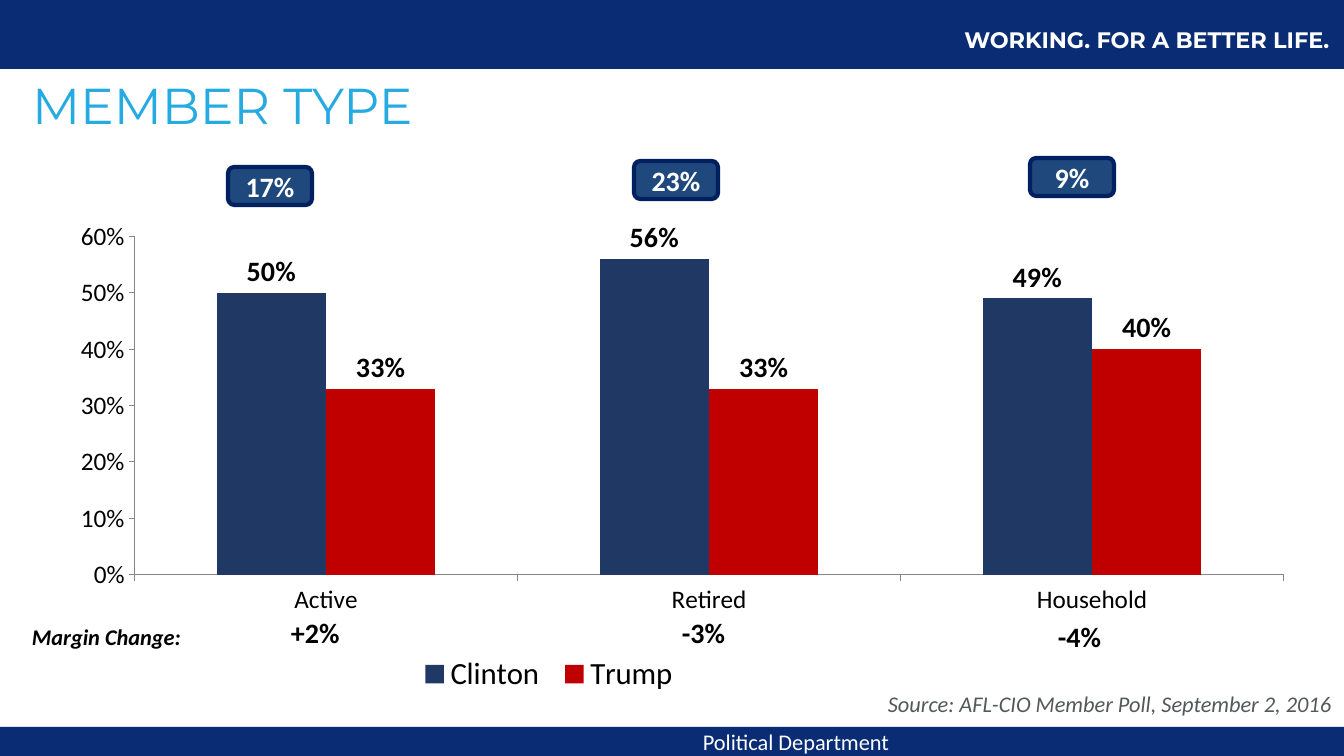
from lxml.etree import SubElement
from pptx import Presentation
from pptx.chart.data import CategoryChartData
from pptx.dml.color import RGBColor
from pptx.enum.chart import XL_CHART_TYPE, XL_LABEL_POSITION, XL_LEGEND_POSITION, XL_TICK_MARK
from pptx.enum.shapes import MSO_SHAPE
from pptx.enum.text import MSO_ANCHOR, PP_ALIGN
from pptx.oxml.ns import qn
from pptx.util import Emu, Pt

NAVY, WHITE, BLACK, AXIS_GRAY = "092C74", "FFFFFF", "000000", "868686"
TITLE = "MEMBER TYPE"
BANDS = [(0, 727, 1344, 29), (0, 0, 1344, 69)]
TEXTS = [
    ("WORKING. FOR A BETTER LIFE.", (868, 21, 558, 37),
     dict(font="Montserrat", color=WHITE, bold=True, align=PP_ALIGN.CENTER)),
    ("Political Department", (446, 734, 453, 15),
     dict(color=WHITE, align=PP_ALIGN.RIGHT, anchor=MSO_ANCHOR.MIDDLE)),
    ("Source: AFL-CIO Member Poll, September 2, 2016", (878, 685, 490, 37),
     dict(color="535959", italic=True)),
    ("Margin Change:", (22, 618, 225, 37), dict(bold=True, italic=True)),
    ("+2%", (281, 611, 76, 44), dict(size=20, bold=True)),
    ("-3%", (672, 611, 80, 44), dict(size=20, bold=True)),
    ("-4%", (1048, 615, 75, 44), dict(size=20, bold=True)),
]
MARGINS = [("17%", 228, 167), ("23%", 634, 161), ("9%", 1030, 158)]
MARGIN_SIZE = (84, 38)
CATEGORIES = ["Active", "Retired", "Household"]
SERIES = [("Clinton", (0.5, 0.56, 0.49), "203864"),
          ("Trump", (0.33, 0.33, 0.4), "C00000")]
CHART_BOX = (42, 218, 1267, 488)
PLOT_LAYOUT = dict(layoutTarget="inner", xMode="edge", yMode="edge", x=0.073, y=0.038, w=0.907, h=0.693)
LEGEND_LAYOUT = dict(xMode="edge", yMode="edge", x=0.29, y=0.9, w=0.22, h=0.08)


def place(*lengths):
    return [Emu(round(length * 914400 / 100.8)) for length in lengths]


def rgb(color):
    return RGBColor.from_string(color)


def style_font(font, name="Calibri", size=16, color=BLACK, bold=False, italic=False):
    font.name, font.size, font.bold, font.italic = name, Pt(size), bold, italic
    font.color.rgb = rgb(color)


def write_text(shape, text, font="Calibri", size=16, color=BLACK, bold=False, italic=False,
               align=PP_ALIGN.LEFT, anchor=MSO_ANCHOR.TOP, spacing=1.0):
    frame = shape.text_frame
    frame.word_wrap = True
    frame.vertical_anchor = anchor
    paragraph = frame.paragraphs[0]
    paragraph.alignment, paragraph.line_spacing = align, spacing
    run = paragraph.add_run()
    run.text = text
    style_font(run.font, font, size, color, bold, italic)


def add_block(slide, kind, box, fill, line=None):
    shape = slide.shapes.add_shape(kind, *place(*box))
    shape.shadow.inherit = False
    shape.fill.solid()
    shape.fill.fore_color.rgb = rgb(fill)
    if line:
        shape.line.color.rgb = rgb(line)
        shape.line.width = Pt(3)
    else:
        shape.line.fill.background()
    return shape


def set_layout(parent, position, settings):
    for previous in parent.findall(qn("c:layout")):
        parent.remove(previous)
    layout = SubElement(parent, qn("c:layout"))
    parent.remove(layout)
    parent.insert(position, layout)
    manual = SubElement(layout, qn("c:manualLayout"))
    for name, value in settings.items():
        SubElement(manual, qn(f"c:{name}")).set("val", str(value))


def add_member_chart(slide):
    data = CategoryChartData(number_format="0%")
    data.categories = CATEGORIES
    for name, values, color in SERIES:
        data.add_series(name, values)
    chart = slide.shapes.add_chart(XL_CHART_TYPE.COLUMN_CLUSTERED, *place(*CHART_BOX), data).chart
    style_font(chart.font, "Cabin", 10)
    chart.has_title = False
    chart.has_legend = True
    chart.legend.position = XL_LEGEND_POSITION.BOTTOM
    chart.legend.include_in_layout = False
    style_font(chart.legend.font, size=22)

    for axis in (chart.category_axis, chart.value_axis):
        axis.has_major_gridlines = False
        axis.major_tick_mark = XL_TICK_MARK.OUTSIDE
        axis.minor_tick_mark = XL_TICK_MARK.NONE
        axis.format.line.color.rgb = rgb(AXIS_GRAY)
        style_font(axis.tick_labels.font, size=18)
    values_axis = chart.value_axis
    values_axis.minimum_scale, values_axis.maximum_scale, values_axis.major_unit = 0, 0.6, 0.1
    values_axis.tick_labels.number_format = "0%"
    values_axis.tick_labels.number_format_is_linked = False

    plot = chart.plots[0]
    plot.gap_width, plot.overlap, plot.vary_by_categories = 150, 0, False
    for series, (name, values, color) in zip(plot.series, SERIES):
        series.format.fill.solid()
        series.format.fill.fore_color.rgb = rgb(color)
        labels = series.data_labels
        labels.show_value = True
        labels.number_format, labels.number_format_is_linked = "0%", False
        labels.position = XL_LABEL_POSITION.OUTSIDE_END
        style_font(labels.font, size=20, bold=True)

    chart_space = chart.element
    set_layout(chart_space.find(".//" + qn("c:plotArea")), 0, PLOT_LAYOUT)
    set_layout(chart_space.find(".//" + qn("c:legend")), 1, LEGEND_LAYOUT)


def main():
    presentation = Presentation()
    presentation.slide_width, presentation.slide_height = place(1344, 756)
    slide = presentation.slides.add_slide(presentation.slide_layouts[5])
    title = slide.shapes.title
    title.left, title.top, title.width, title.height = place(22, 51, 1267, 114)
    write_text(title, TITLE, font="Montserrat", size=36, color="25AAE1",
               anchor=MSO_ANCHOR.MIDDLE, spacing=0.9)
    for box in BANDS:
        add_block(slide, MSO_SHAPE.RECTANGLE, box, NAVY)
    add_member_chart(slide)
    for text, left, top in MARGINS:
        badge = add_block(slide, MSO_SHAPE.ROUNDED_RECTANGLE, (left, top, *MARGIN_SIZE), "1F497D", "002060")
        write_text(badge, text, size=20, color=WHITE, bold=True,
                   align=PP_ALIGN.CENTER, anchor=MSO_ANCHOR.MIDDLE)
    for text, box, style in TEXTS:
        write_text(slide.shapes.add_textbox(*place(*box)), text, **style)
    presentation.save("out.pptx")


if __name__ == "__main__":
    main()
